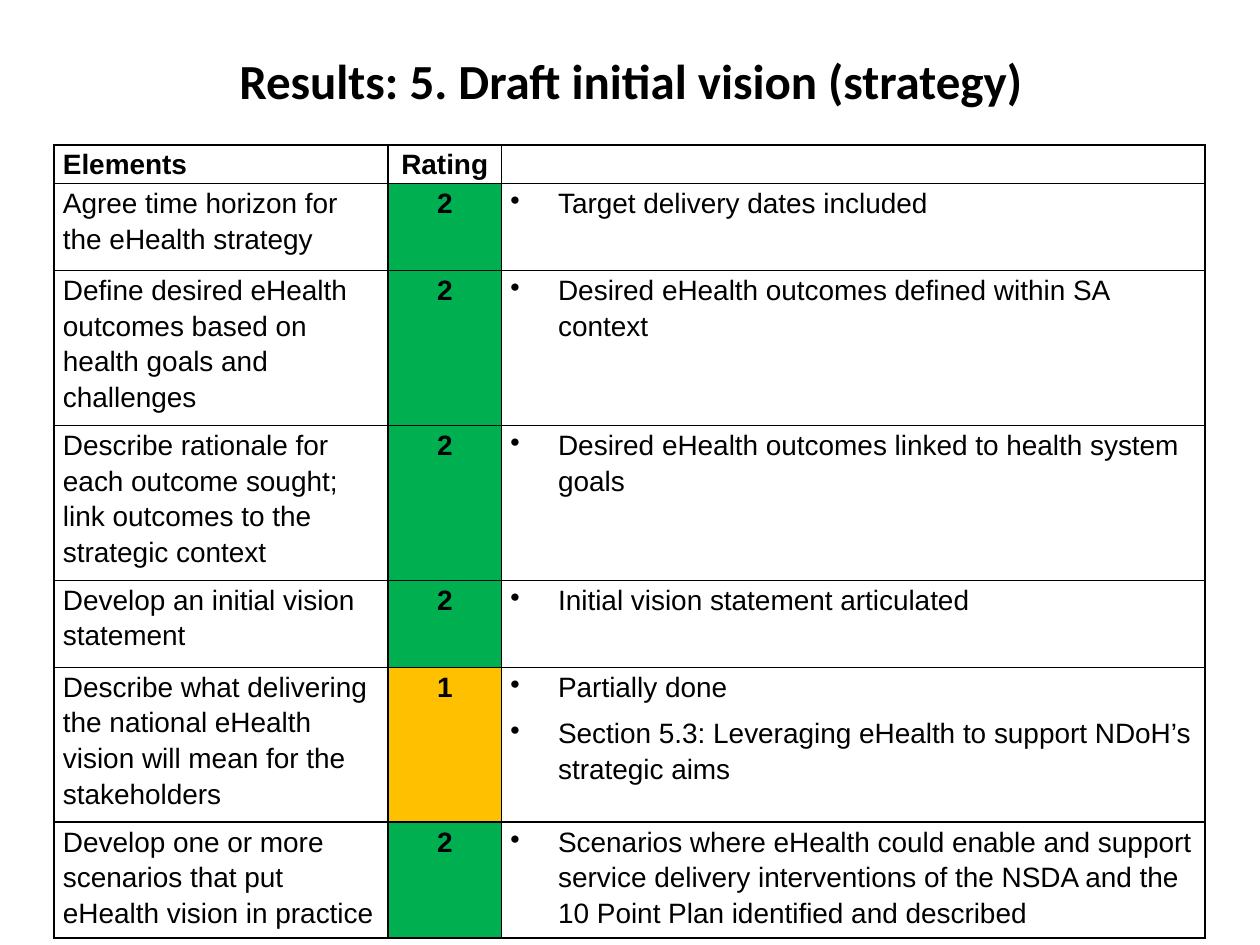
import pptx
import pptx.dml.color
import pptx.enum.text
import pptx.oxml
import pptx.oxml.ns
import pptx.util

ALIGN = pptx.enum.text.PP_ALIGN
ANCHOR = pptx.enum.text.MSO_ANCHOR
WIDE, HIGH = pptx.util.Inches(10), pptx.util.Inches(7.5)
BLACK, GREEN, AMBER = "000000", "00B050", "FFC000"
RATES = {"2": GREEN, "1": AMBER}

# Columns and rows are hundredths of the slide's width and height.
COLS = [26.5, 9, 55.85]
HEAD = ["Elements", "Rating", ""]
HEAD_ROW = 3.87
ITEMS = [
    (9.2, "Agree time horizon for the eHealth strategy", "2",
     ["Target delivery dates included"]),
    (16.4, "Define desired eHealth outcomes based on health goals and challenges", "2",
     ["Desired eHealth outcomes defined within SA context"]),
    (16.4, "Describe rationale for each outcome sought; link outcomes to the strategic context",
     "2", ["Desired eHealth outcomes linked to health system goals"]),
    (9.2, "Develop an initial vision statement", "2",
     ["Initial vision statement articulated"]),
    (16.4, "Describe what delivering the national eHealth vision will mean for the stakeholders",
     "1", ["Partially done",
           "Section 5.3: Leveraging eHealth to support NDoH’s strategic aims"]),
    (12.27, "Develop one or more scenarios that put eHealth vision in practice", "2",
     ["Scenarios where eHealth could enable and support service delivery interventions "
      "of the NSDA and the 10 Point Plan identified and described"]),
]


def across(cols):
    return int(WIDE * cols / 100)


def down(rows):
    return int(HIGH * rows / 100)


def paint(color, code):
    color.rgb = pptx.dml.color.RGBColor.from_string(code)


def add_run(para, text, face, size, bold):
    run = para.add_run()
    run.text = text
    run.font.name = face
    run.font.size = pptx.util.Pt(size)
    run.font.bold = bold
    run.font.fill.solid()
    paint(run.font.fill.fore_color, BLACK)


def add_title(slide, text):
    box = slide.shapes.add_textbox(across(2.8), down(0.13), across(94.5), down(16.67))
    frame = box.text_frame
    frame.word_wrap = True
    frame.vertical_anchor = ANCHOR.MIDDLE
    para = frame.paragraphs[0]
    para.alignment = ALIGN.CENTER
    add_run(para, text, "Calibri", 28, True)


def add_bullet(para):
    props = para._p.get_or_add_pPr()
    indent = pptx.util.Inches(0.38)
    props.set("marL", str(indent))
    props.set("indent", str(-indent))
    mark = pptx.oxml.parse_xml(f'<a:buChar {pptx.oxml.ns.nsdecls("a")} char="•"/>')
    props.append(mark)


def add_border(cell):
    props = cell._tc.get_or_add_tcPr()
    for side in ("lnL", "lnR", "lnT", "lnB"):
        props.append(pptx.oxml.parse_xml(
            f'<a:{side} {pptx.oxml.ns.nsdecls("a")} w="{pptx.util.Pt(1)}">'
            f'<a:solidFill><a:srgbClr val="{BLACK}"/></a:solidFill></a:{side}>'))


def fill_cell(cell, lines, bold=False, align=ALIGN.LEFT, back=None, bullet=False):
    add_border(cell)
    if back:
        cell.fill.solid()
        paint(cell.fill.fore_color, back)
    else:
        cell.fill.background()
    cell.margin_left = cell.margin_right = pptx.util.Inches(0.07)
    cell.margin_top = cell.margin_bottom = 0
    frame = cell.text_frame
    for num, line in enumerate(lines):
        para = frame.add_paragraph() if num else frame.paragraphs[0]
        para.alignment = align
        para.line_spacing = 1.15
        para.space_before = para.space_after = pptx.util.Pt(3)
        if bullet:
            add_bullet(para)
        add_run(para, line, "Arial", 16, bold)


def add_grid(slide):
    rows = [HEAD_ROW] + [item[0] for item in ITEMS]
    table = slide.shapes.add_table(
        len(rows), len(COLS), across(4.3), down(15.33),
        across(sum(COLS)), down(sum(rows))).table
    for col, size in zip(table.columns, COLS):
        col.width = across(size)
    for row, size in zip(table.rows, rows):
        row.height = down(size)
    for col, text in enumerate(HEAD):
        align = ALIGN.CENTER if col == 1 else ALIGN.LEFT
        fill_cell(table.cell(0, col), [text], bold=True, align=align)
    for row, (_, name, rate, notes) in enumerate(ITEMS, 1):
        fill_cell(table.cell(row, 0), [name])
        fill_cell(table.cell(row, 1), [rate], bold=True,
                  align=ALIGN.CENTER, back=RATES[rate])
        fill_cell(table.cell(row, 2), notes, bullet=True)


def main():
    deck = pptx.Presentation()
    deck.slide_width, deck.slide_height = WIDE, HIGH
    slide = deck.slides.add_slide(deck.slide_layouts[6])
    add_title(slide, "Results: 5. Draft initial vision (strategy)")
    add_grid(slide)
    deck.save("out.pptx")


if __name__ == "__main__":
    main()
